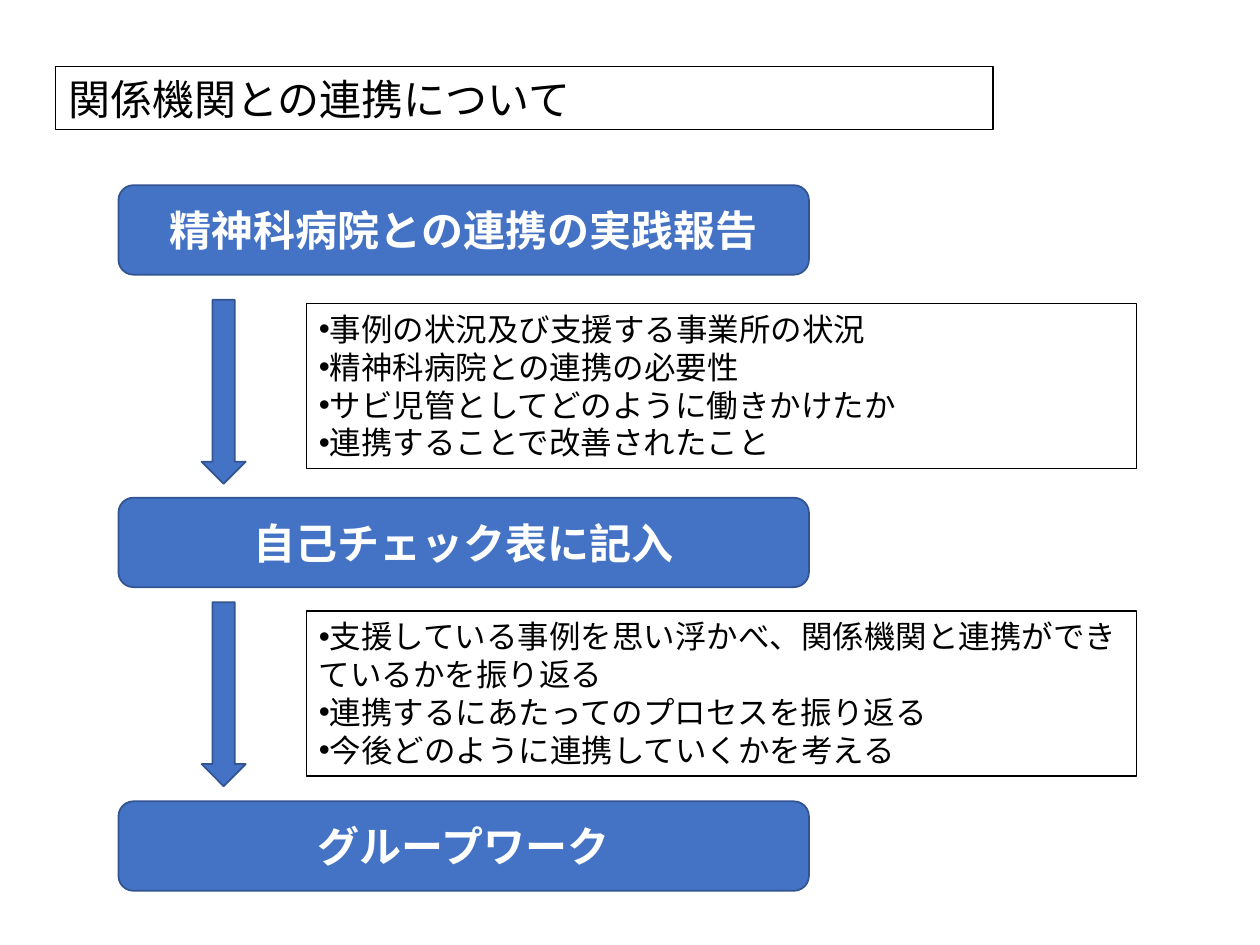
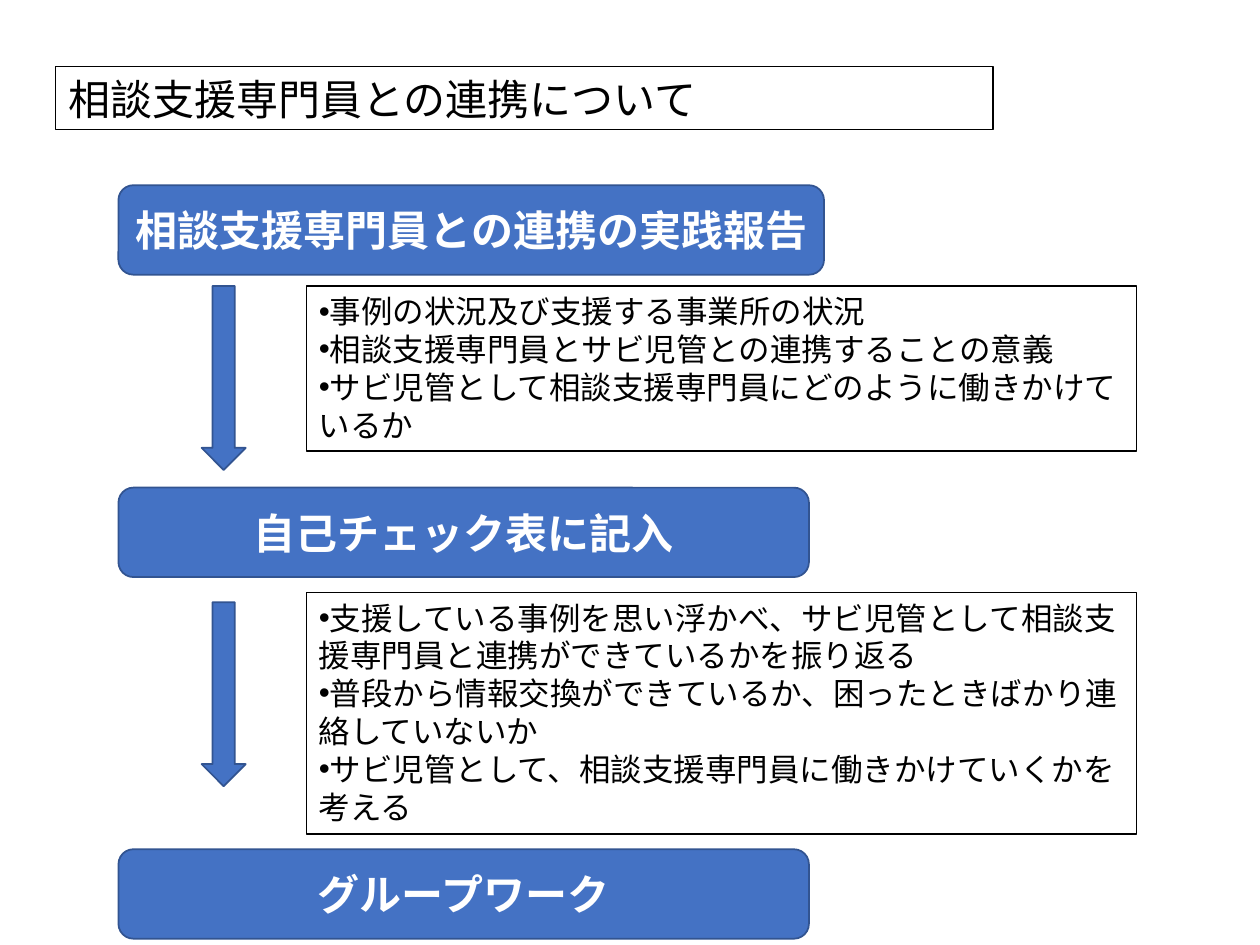
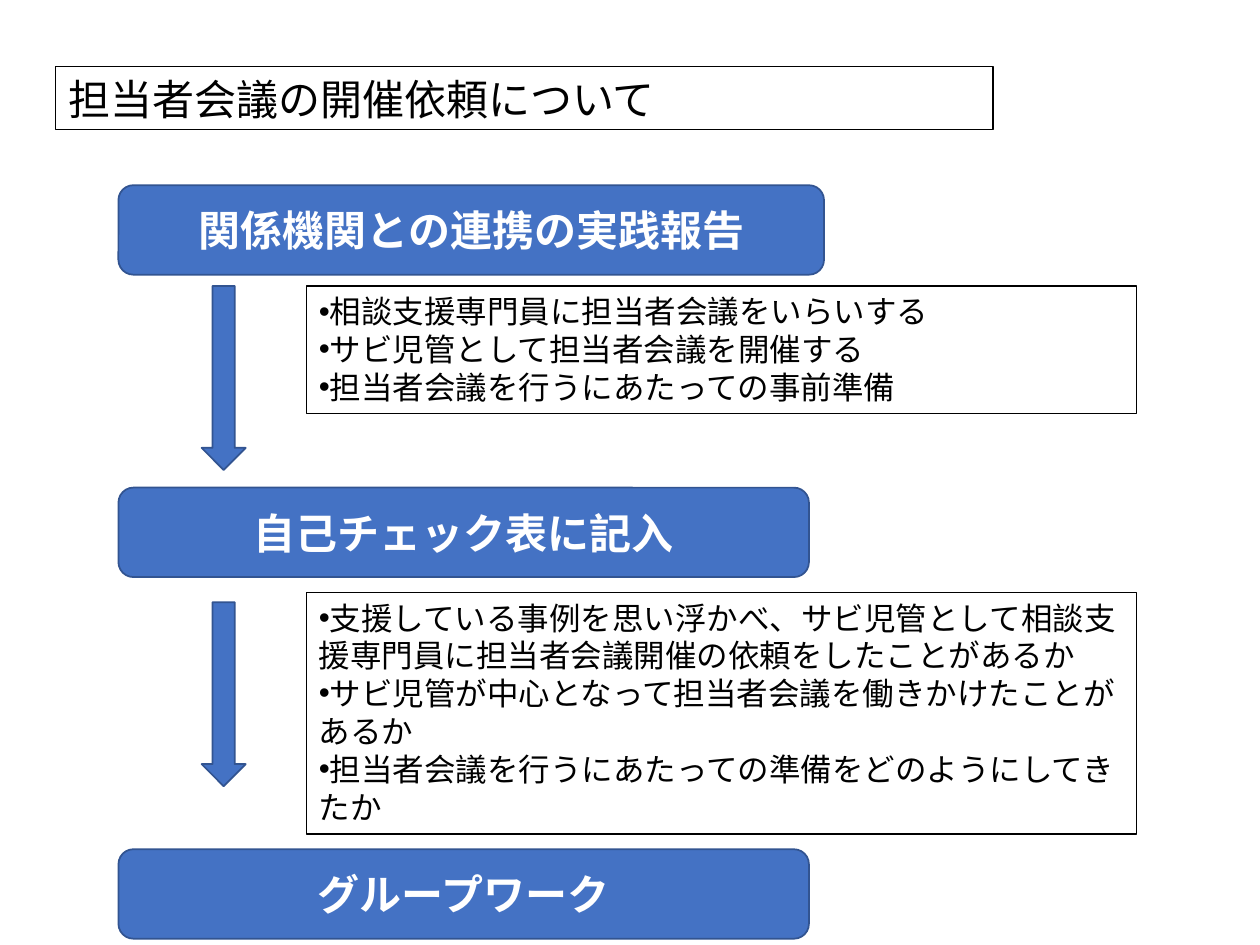
import pptx
import pptx.util
import pptx.dml.color
import pptx.enum.shapes
import pptx.enum.text
import pptx.oxml
import pptx.oxml.ns

Inches = pptx.util.Inches
Pt = pptx.util.Pt
SHAPE = pptx.enum.shapes.MSO_SHAPE
ALIGN = pptx.enum.text.PP_ALIGN
ANCHOR = pptx.enum.text.MSO_ANCHOR

FONT = "Calibri"
BLUE, NAVY, BLACK, WHITE = "4472C4", "325491", "000000", "FFFFFF"


def paint(box, fill, line, width):
    if fill:
        box.fill.solid()
        box.fill.fore_color.rgb = pptx.dml.color.RGBColor.from_string(fill)
    else:
        box.fill.background()
    box.line.color.rgb = pptx.dml.color.RGBColor.from_string(line)
    box.line.width = Pt(width)


def write(box, lines, size=18, color=BLACK, bold=False, align=ALIGN.LEFT, anchor=ANCHOR.TOP):
    frame = box.text_frame
    frame.word_wrap = True
    frame.auto_size = pptx.enum.text.MSO_AUTO_SIZE.NONE
    frame.vertical_anchor = anchor
    frame.text = "\n".join(lines)
    for paragraph in frame.paragraphs:
        paragraph.alignment = align
        paragraph.space_before = Pt(0)
        properties = paragraph._p.get_or_add_pPr()
        properties.set("marL", "0")
        properties.set("indent", "0")
        for run in paragraph.runs:
            run.font.name = FONT
            run.font.size = Pt(size)
            run.font.bold = bold
            run.font.color.rgb = pptx.dml.color.RGBColor.from_string(color)
            run.font._element.append(pptx.oxml.parse_xml(
                f'<a:ea {pptx.oxml.ns.nsdecls("a")} typeface="{FONT}"/>'))


sessions = [
    {
        "topic": "関係機関との連携について",
        "report": "精神科病院との連携の実践報告",
        "report_width": 5.48,
        "step_tops": [1.47, 3.95, 6.36],
        "arrow_tops": [2.38, 4.78],
        "points": [
            (2.41, 1.31, [
                "事例の状況及び支援する事業所の状況",
                "精神科病院との連携の必要性",
                "サビ児管としてどのように働きかけたか",
                "連携することで改善されたこと",
            ]),
            (4.85, 1.31, [
                "支援している事例を思い浮かべ、関係機関と連携ができているかを振り返る",
                "連携するにあたってのプロセスを振り返る",
                "今後どのように連携していくかを考える",
            ]),
        ],
    },
    {
        "topic": "相談支援専門員との連携について",
        "report": "相談支援専門員との連携の実践報告",
        "report_width": 5.6,
        "step_tops": [1.47, 3.87, 6.74],
        "arrow_tops": [2.27, 4.78],
        "points": [
            (2.27, 1.31, [
                "事例の状況及び支援する事業所の状況",
                "相談支援専門員とサビ児管との連携することの意義",
                "サビ児管として相談支援専門員にどのように働きかけているか",
            ]),
            (4.7, 1.92, [
                "支援している事例を思い浮かべ、サビ児管として相談支援専門員と連携ができているかを振り返る",
                "普段から情報交換ができているか、困ったときばかり連絡していないか",
                "サビ児管として、相談支援専門員に働きかけていくかを考える",
            ]),
        ],
    },
    {
        "topic": "担当者会議の開催依頼について",
        "report": "関係機関との連携の実践報告",
        "report_width": 5.6,
        "step_tops": [1.47, 3.87, 6.74],
        "arrow_tops": [2.27, 4.78],
        "points": [
            (2.27, 1.01, [
                "相談支援専門員に担当者会議をいらいする",
                "サビ児管として担当者会議を開催する",
                "担当者会議を行うにあたっての事前準備",
            ]),
            (4.7, 1.92, [
                "支援している事例を思い浮かべ、サビ児管として相談支援専門員に担当者会議開催の依頼をしたことがあるか",
                "サビ児管が中心となって担当者会議を働きかけたことがあるか",
                "担当者会議を行うにあたっての準備をどのようにしてきたか",
            ]),
        ],
    },
]

deck = pptx.Presentation()
deck.slide_width = Inches(10)
deck.slide_height = Inches(7.5)
two_lists = deck.slide_layouts[3]

for session in sessions:
    slide = deck.slides.add_slide(two_lists)
    topic, *point_lists = slide.placeholders

    topic.left, topic.top = Inches(0.44), Inches(0.53)
    topic.width, topic.height = Inches(7.44), Inches(0.5)
    paint(topic, None, BLACK, 0.75)
    write(topic, [session["topic"]], size=24)

    for points, (top, height, lines) in zip(point_lists, session["points"]):
        points.left, points.top = Inches(2.43), Inches(top)
        points.width, points.height = Inches(6.59), Inches(height)
        paint(points, None, BLACK, 0.75)
        write(points, lines)

    steps = [
        (session["report"], session["report_width"]),
        ("自己チェック表に記入", 5.48),
        ("グループワーク", 5.48),
    ]
    for (label, width), top in zip(steps, session["step_tops"]):
        step = slide.shapes.add_shape(SHAPE.ROUNDED_RECTANGLE, Inches(0.94), Inches(top),
                                      Inches(width), Inches(0.71))
        step.shadow.inherit = False
        paint(step, BLUE, NAVY, 1)
        write(step, [label], size=24, color=WHITE, bold=True, align=ALIGN.CENTER,
              anchor=ANCHOR.MIDDLE)

    for top in session["arrow_tops"]:
        arrow = slide.shapes.add_shape(SHAPE.DOWN_ARROW, Inches(1.6), Inches(top),
                                       Inches(0.35), Inches(1.46))
        arrow.shadow.inherit = False
        paint(arrow, BLUE, NAVY, 1)

deck.save("out.pptx")
